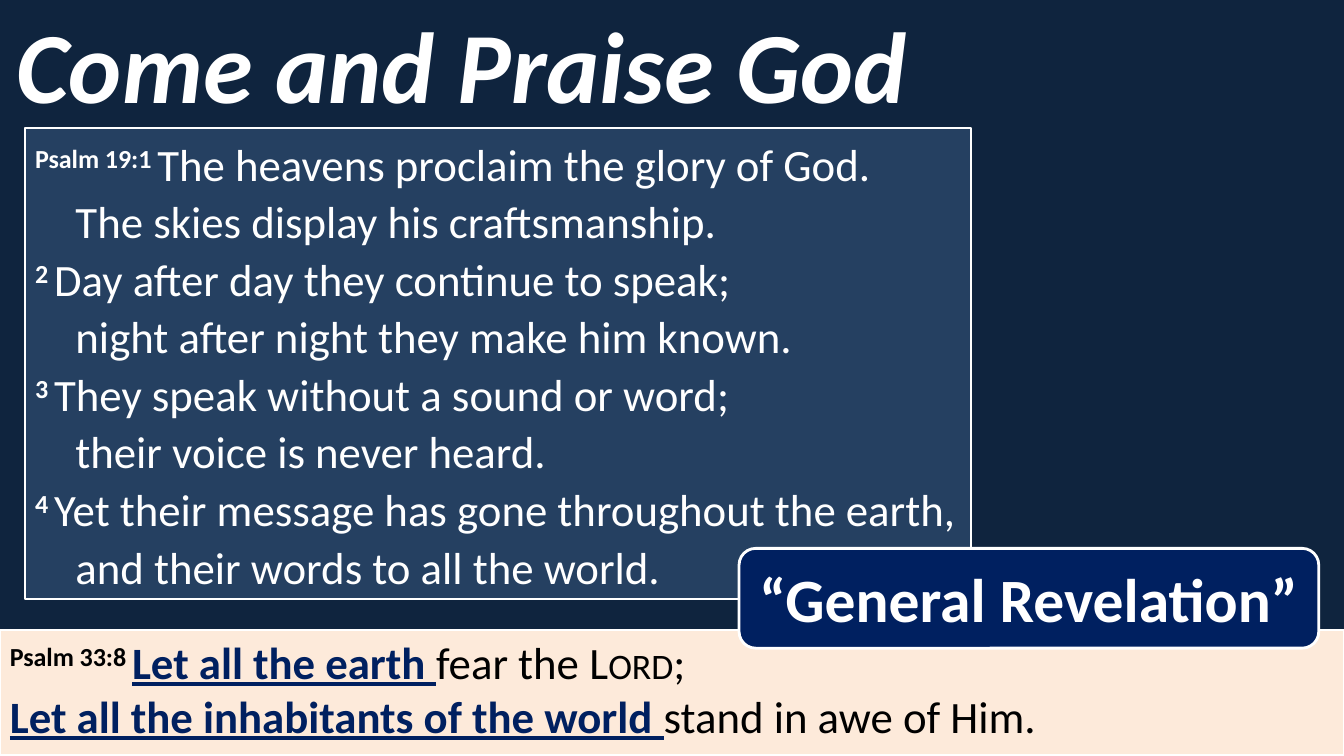
from dataclasses import dataclass, field

from pptx import Presentation
from pptx.dml.color import RGBColor
from pptx.enum.shapes import MSO_SHAPE
from pptx.enum.text import MSO_ANCHOR, PP_ALIGN
from pptx.slide import Slide
from pptx.text.text import TextFrame
from pptx.util import Inches, Pt

RECT, ROUND = MSO_SHAPE.RECTANGLE, MSO_SHAPE.ROUNDED_RECTANGLE
TOP, MIDDLE = MSO_ANCHOR.TOP, MSO_ANCHOR.MIDDLE
LEFT, CENTER = PP_ALIGN.LEFT, PP_ALIGN.CENTER


@dataclass(frozen=True)
class Theme:
    font: str = "Calibri"
    back: str = "0F243E"
    panel: str = "254061"
    cream: str = "FDEADA"
    navy: str = "002060"
    white: str = "FFFFFF"
    black: str = "000000"
    title: int = 72
    label: int = 44
    body: int = 32


THEME = Theme()


@dataclass
class Span:
    text: str
    color: str = THEME.white
    form: dict = field(default_factory=dict)
    marks: dict = field(default_factory=dict)


@dataclass
class Line:
    spans: list[Span]
    indent: float = 0


@dataclass
class Box:
    at: tuple[float, float, float, float]
    lines: list[Line]
    size: int = THEME.body
    shape: MSO_SHAPE = RECT
    fill: str = ""
    border: float = 1.5
    anchor: MSO_ANCHOR = TOP
    align: PP_ALIGN = LEFT
    space: float = 1


def rgb(code: str) -> RGBColor:
    return RGBColor.from_string(code)


def verse(mark: str, color: str = THEME.white) -> Span:
    """Make the raised bold reference that opens a verse."""
    return Span(mark, color, {"bold": True}, {"baseline": "30000"})


def stress(text: str) -> Span:
    return Span(text, THEME.navy, {"bold": True, "underline": True})


def plain(text: str, **marks: str) -> Span:
    return Span(text, THEME.black, marks=marks)


def write(frame: TextFrame, box: Box) -> None:
    form = {"word_wrap": True, "vertical_anchor": box.anchor}
    for name, value in form.items():
        setattr(frame, name, value)
    for index, line in enumerate(box.lines):
        para = frame.paragraphs[0] if index == 0 else frame.add_paragraph()
        para.alignment = box.align
        para.line_spacing = box.space
        if line.indent:
            para._p.get_or_add_pPr().set("marL", str(Inches(line.indent)))
        for span in line.spans:
            run = para.add_run()
            run.text = span.text
            look = {"name": THEME.font, "size": Pt(box.size), "bold": False}
            for name, value in (look | span.form).items():
                setattr(run.font, name, value)
            run.font.color.rgb = rgb(span.color)
            for name, value in span.marks.items():
                run._r.get_or_add_rPr().set(name, value)


def draw(slide: Slide, box: Box) -> None:
    place = [Inches(value) for value in box.at]
    if box.fill:
        shape = slide.shapes.add_shape(box.shape, *place)
        shape.shadow.inherit = False
        shape.fill.solid()
        shape.fill.fore_color.rgb = rgb(box.fill)
        shape.line.color.rgb = rgb(THEME.white)
        shape.line.width = Pt(box.border)
    else:
        shape = slide.shapes.add_textbox(*place)
    write(shape.text_frame, box)


PSALM = [
    ("Psalm 19:1 ", "The heavens proclaim the glory of God.",
     "The skies display his craftsmanship."),
    ("2\u00a0", "Day after day they continue to speak;",
     "night after night they make him known."),
    ("3\u00a0", "They speak without a sound or word;",
     "their voice is never heard."),
    ("4\u00a0", "Yet their message has gone throughout the earth,",
     "and their words to all the world."),
]
POEM = [
    line
    for mark, first, second in PSALM
    for line in (Line([verse(mark), Span(first)]), Line([Span(second)], 0.4))
]
CALL = [
    Line([verse("Psalm 33:8 ", THEME.black), stress("Let all the earth "),
          plain("fear the "), plain("Lord", cap="small"), plain(";")]),
    Line([stress("Let all the inhabitants of the world "),
          plain("stand in awe of Him.")]),
]
TITLE = [Line([Span("Come and Praise God", form={"bold": True, "italic": True})])]
LABEL = [Line([Span("“General Revelation”", form={"bold": True})])]

BOXES = [
    Box((0, 6.25, 13.33, 1.24), CALL, fill=THEME.cream),
    Box((0, 0, 9.17, 1.25), TITLE, THEME.title, anchor=MIDDLE, align=CENTER),
    Box((0.25, 1.27, 9.38, 4.67), POEM, fill=THEME.panel, space=1.07),
    Box((7.33, 5.44, 5.75, 0.99), LABEL, THEME.label, ROUND, THEME.navy, 2,
        MIDDLE, CENTER),
]


def main() -> None:
    deck = Presentation()
    deck.slide_width, deck.slide_height = Inches(13.33), Inches(7.5)
    slide = deck.slides.add_slide(deck.slide_layouts[6])
    slide.background.fill.solid()
    slide.background.fill.fore_color.rgb = rgb(THEME.back)
    for box in BOXES:
        draw(slide, box)
    deck.save("out.pptx")


if __name__ == "__main__":
    main()
